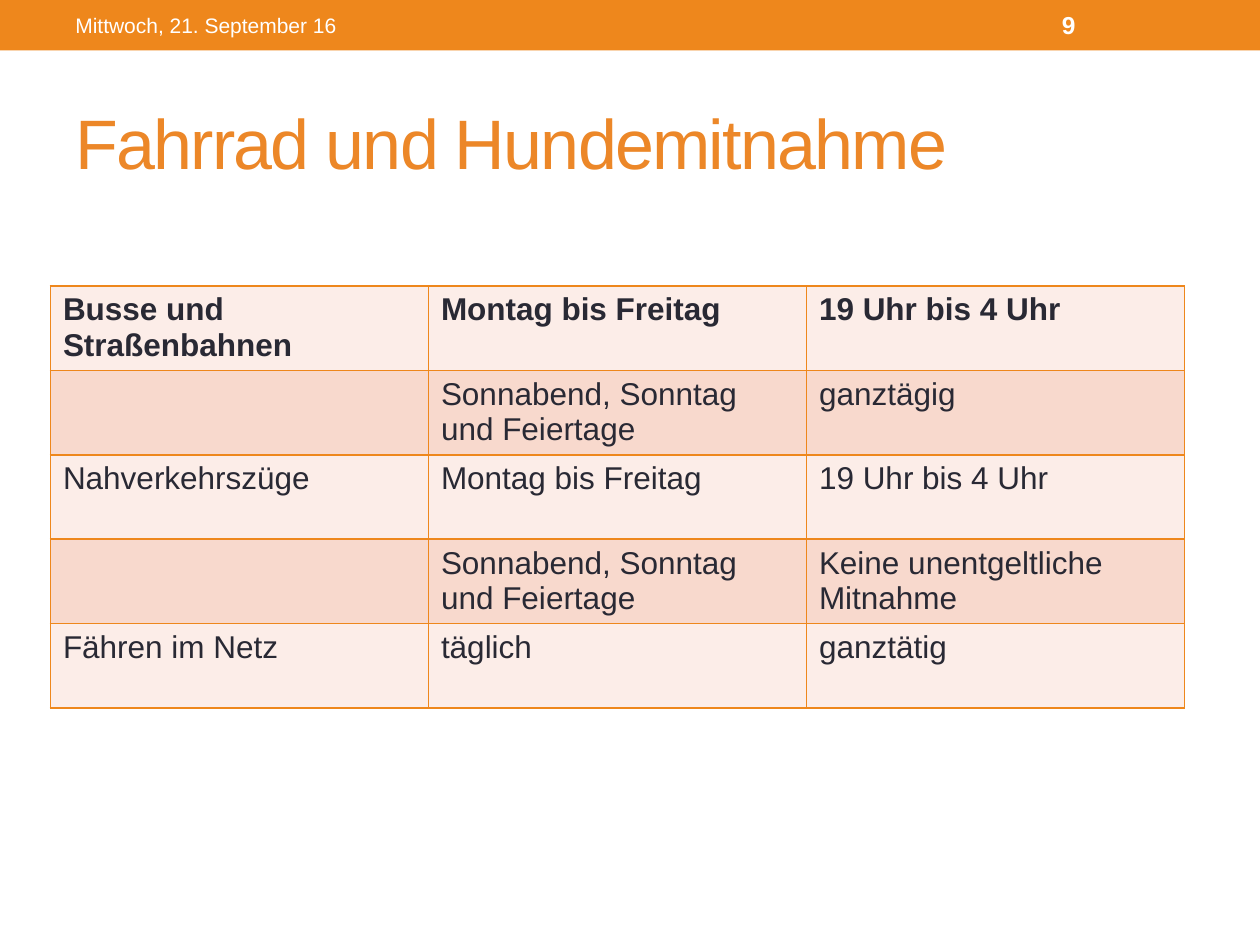
from dataclasses import dataclass

from pptx import Presentation
from pptx.dml.color import RGBColor
from pptx.enum.shapes import MSO_SHAPE as Shape
from pptx.enum.text import MSO_ANCHOR as Anchor
from pptx.oxml.xmlchemy import OxmlElement
from pptx.util import Inches, Pt

FONT = "Arial"
ORANGE = "EE871C"
TITLE_ORANGE = "EC8728"
WHITE = "FFFFFF"
DARK = "292934"
ROW_FILLS = ("FCEDE8", "F8D9CD")
COLUMN_WIDTH = 3
ROW_HEIGHT = 0.67

RULES = (
    ("Busse und Straßenbahnen", "Montag bis Freitag", "19 Uhr bis 4 Uhr"),
    ("", "Sonnabend, Sonntag und Feiertage", "ganztägig"),
    ("Nahverkehrszüge", "Montag bis Freitag", "19 Uhr bis 4 Uhr"),
    ("", "Sonnabend, Sonntag und Feiertage", "Keine unentgeltliche Mitnahme"),
    ("Fähren im Netz", "täglich", "ganztätig"),
)


@dataclass
class Label:
    text: str
    left: float
    top: float
    width: float
    height: float
    size: float
    color: str
    bold: bool = False
    spacing: float = 0


LABELS = (
    Label("Fahrrad und Hundemitnahme", 0.5, 0.58, 9, 1.08, 40, TITLE_ORANGE, spacing=-1),
    Label("9", 8.33, 0.02, 1.17, 0.36, 14, WHITE, bold=True),
    Label("Mittwoch, 21. September 16", 0.5, 0.02, 3.17, 0.36, 12, WHITE),
)


def rgb(color: str) -> RGBColor:
    return RGBColor.from_string(color)


def add_span(para, text: str, size: float, color: str, bold: bool):
    span = para.add_run()
    span.text = text
    span.font.name = FONT
    span.font.size = Pt(size)
    span.font.bold = bold
    span.font.color.rgb = rgb(color)
    return span


def add_band(page) -> None:
    band = page.shapes.add_shape(Shape.RECTANGLE, 0, 0, Inches(10), Inches(0.4))
    band.shadow.inherit = False
    band.fill.solid()
    band.fill.fore_color.rgb = rgb(ORANGE)
    band.line.fill.background()


def add_label(page, label: Label) -> None:
    box = page.shapes.add_textbox(
        Inches(label.left), Inches(label.top), Inches(label.width), Inches(label.height)
    )
    frame = box.text_frame
    frame.word_wrap = True
    frame.vertical_anchor = Anchor.MIDDLE
    span = add_span(frame.paragraphs[0], label.text, label.size, label.color, label.bold)
    if label.spacing:
        span.font._element.set("spc", str(round(label.spacing * 100)))


def add_borders(cell, color: str, width: float) -> None:
    properties = cell._tc.get_or_add_tcPr()
    for position, side in enumerate(("lnL", "lnR", "lnT", "lnB")):
        line = OxmlElement(f"a:{side}")
        line.set("w", str(Pt(width)))
        fill = OxmlElement("a:solidFill")
        value = OxmlElement("a:srgbClr")
        value.set("val", color)
        fill.append(value)
        line.append(fill)
        properties.insert(position, line)


def add_rules_table(page) -> None:
    row_count, column_count = len(RULES), len(RULES[0])
    table = page.shapes.add_table(
        row_count, column_count, Inches(0.4), Inches(2.27),
        Inches(column_count * COLUMN_WIDTH), Inches(row_count * ROW_HEIGHT),
    ).table
    table.first_row = False
    table.horz_banding = False
    for column in table.columns:
        column.width = Inches(COLUMN_WIDTH)
    for row_index, texts in enumerate(RULES):
        table.rows[row_index].height = Inches(ROW_HEIGHT)
        for column_index, text in enumerate(texts):
            cell = table.cell(row_index, column_index)
            cell.fill.solid()
            cell.fill.fore_color.rgb = rgb(ROW_FILLS[row_index % 2])
            add_borders(cell, ORANGE, 1)
            if text:
                para = cell.text_frame.paragraphs[0]
                add_span(para, text, 18, DARK, bold=row_index == 0)


def main() -> None:
    deck = Presentation()
    deck.slide_width = Inches(10)
    deck.slide_height = Inches(7.5)
    page = deck.slides.add_slide(deck.slide_layouts[6])
    add_band(page)
    add_rules_table(page)
    for label in LABELS:
        add_label(page, label)
    deck.save("out.pptx")


if __name__ == "__main__":
    main()
